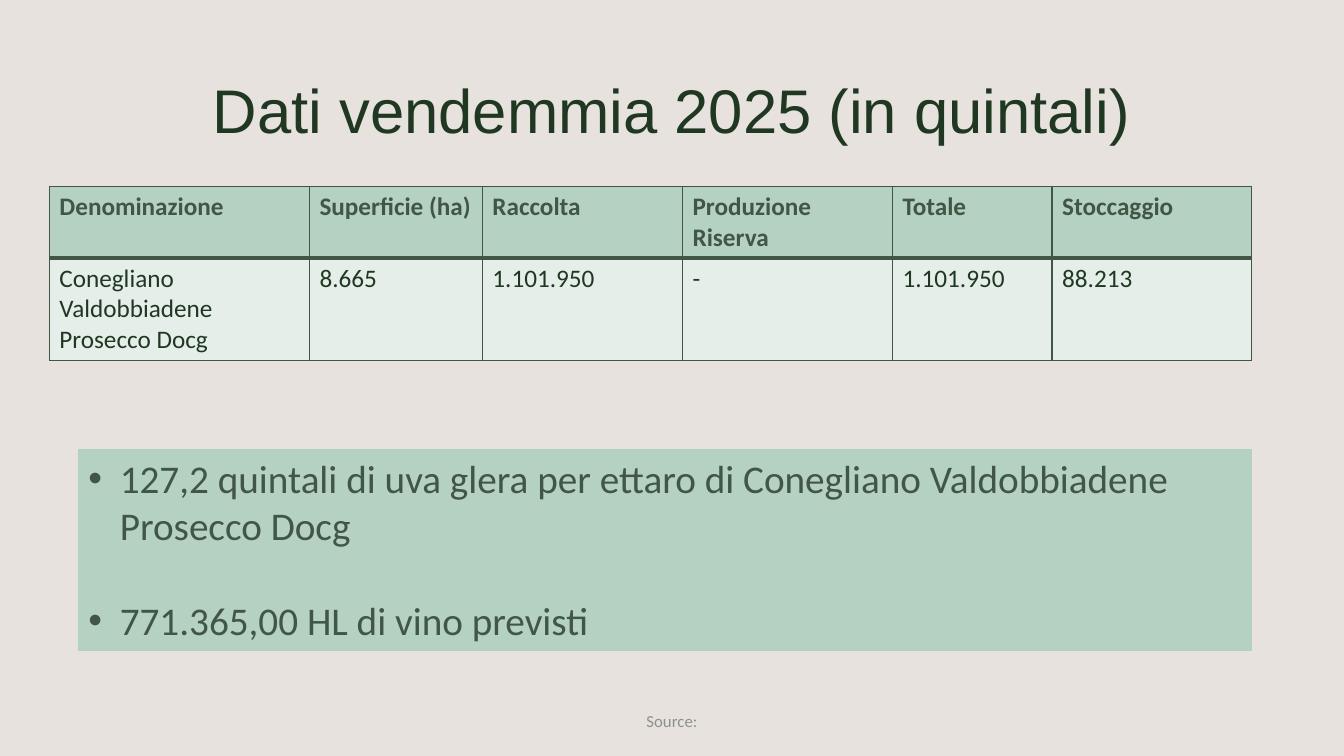
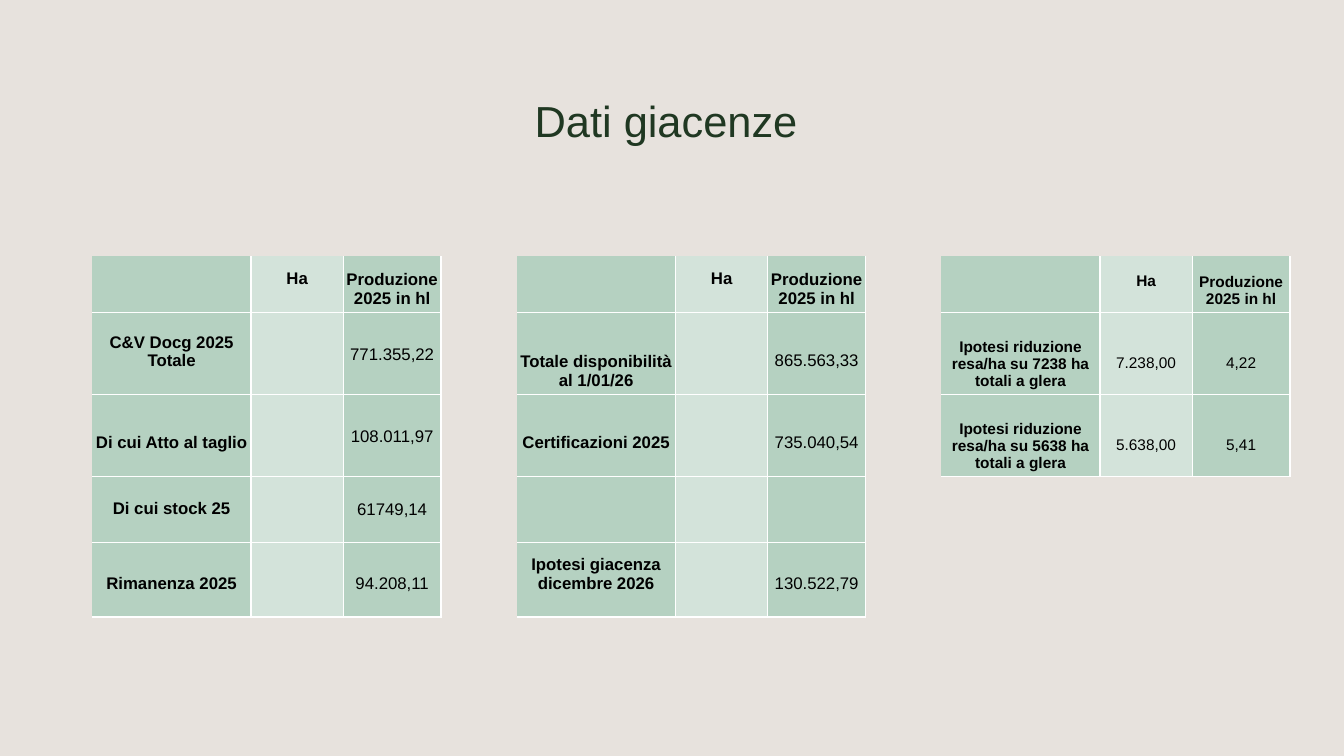
import pptx
import pptx.util
import pptx.dml.color
import pptx.enum.shapes
import pptx.enum.text
from lxml import etree

Pt = pptx.util.Pt
ALIGN = pptx.enum.text.PP_ALIGN
ANCHOR = pptx.enum.text.MSO_ANCHOR
DRAWING_NS = "http://schemas.openxmlformats.org/drawingml/2006/main"

# Shared look
BACKGROUND, INK, MOSS = "E7E2DD", "203822", "415644"
SAGE, MIST, PALE, WHITE, BLACK = "B5D1C1", "D3E3DA", "E5EEE9", "FFFFFF", "000000"
HEADING_FONT, BODY_FONT = "Arial", "Calibri"

# Content: harvest
HARVEST_TITLE = "Dati vendemmia 2025 (in quintali)"
HARVEST_ROWS = [
    ["Denominazione", "Superficie (ha)", "Raccolta", "Produzione Riserva",
     "Totale", "Stoccaggio"],
    ["Conegliano Valdobbiadene Prosecco Docg", "8.665", "1.101.950", "-",
     "1.101.950", "88.213"],
]
HARVEST_COLUMNS = [185.8, 123.5, 143, 150, 114, 142.4]
HARVEST_HEIGHTS = [51, 73]
HARVEST_NOTES = [
    "127,2 quintali di uva glera per ettaro di Conegliano Valdobbiadene Prosecco Docg",
    "771.365,00 HL di vino previsti",
]
SOURCE_LABEL = "Source:"

# Content: stocks. Each cell is its text and where the text sits:
# on the bottom edge, one line above it, or in the middle.
LOW, RAISED, MIDDLE = "low", "raised", "middle"
EMPTY = ("", LOW)
STOCK_TITLE = "Dati giacenze "
STOCK_HEADER = [EMPTY, ("Ha", RAISED), ("Produzione 2025 in hl", LOW)]
STOCK_TABLES = [
    (12, [
        [("C&V Docg 2025 Totale", RAISED), EMPTY, ("771.355,22", MIDDLE)],
        [("Di cui Atto al taglio", RAISED), EMPTY, ("108.011,97", MIDDLE)],
        [("Di cui stock 25", RAISED), EMPTY, ("61749,14", MIDDLE)],
        [("Rimanenza 2025", RAISED), EMPTY, ("94.208,11", RAISED)],
    ]),
    (12, [
        [("Totale disponibilità al 1/01/26", LOW), EMPTY, ("865.563,33", RAISED)],
        [("Certificazioni 2025", RAISED), EMPTY, ("735.040,54", RAISED)],
        [EMPTY, EMPTY, EMPTY],
        [("Ipotesi giacenza dicembre 2026", RAISED), EMPTY, ("130.522,79", RAISED)],
    ]),
    (11, [
        [("Ipotesi riduzione resa/ha su 7238 ha totali a glera", LOW),
         ("7.238,00", RAISED), ("4,22", RAISED)],
        [("Ipotesi riduzione resa/ha su 5638 ha totali a glera", LOW),
         ("5.638,00", RAISED), ("5,41", RAISED)],
    ]),
]
STOCK_COLUMNS = [113.3, 66, 69.8]
STOCK_HEIGHTS = [40.4, 58.6, 58.6, 46.8, 53.4]
STOCK_LEFT, STOCK_TOP, STOCK_PITCH = 66, 183, 303.2


def color(value):
    return pptx.dml.color.RGBColor.from_string(value)


def box(left, top, width, height):
    return Pt(left), Pt(top), Pt(width), Pt(height)


def add_text(paragraph, text, size, font, ink, bold=False, align=ALIGN.LEFT):
    paragraph.alignment = align
    run = paragraph.add_run()
    run.text = text
    run.font.size, run.font.name, run.font.bold = Pt(size), font, bold
    run.font.color.rgb = color(ink)


def add_titled_slide(deck, title, top, height, size):
    slide = deck.slides.add_slide(deck.slide_layouts[5])
    heading = slide.shapes.title
    heading.left, heading.top, heading.width, heading.height = box(66, top, 828, height)
    frame = heading.text_frame
    frame.word_wrap = True
    frame.vertical_anchor = ANCHOR.MIDDLE
    frame.paragraphs[0].line_spacing = 0.9
    add_text(frame.paragraphs[0], title, size, HEADING_FONT, INK, align=ALIGN.CENTER)
    return slide


def add_bullet(paragraph, indent):
    properties = paragraph._p.get_or_add_pPr()
    properties.set("marL", str(Pt(indent)))
    properties.set("indent", str(-Pt(indent)))
    etree.SubElement(properties, f"{{{DRAWING_NS}}}buFont", typeface="Arial")
    etree.SubElement(properties, f"{{{DRAWING_NS}}}buChar", char="•")


def set_borders(cell, ink, **widths):
    """Draw the edges L, R, T and B; width 0 leaves an edge open."""
    properties = cell._tc.get_or_add_tcPr()
    for place, edge in enumerate("LRTB"):
        width = widths.get(edge, 1)
        line = etree.Element(f"{{{DRAWING_NS}}}ln{edge}", w=str(Pt(width)))
        fill = etree.SubElement(
            line, f"{{{DRAWING_NS}}}{'solidFill' if width else 'noFill'}")
        if width:
            etree.SubElement(fill, f"{{{DRAWING_NS}}}srgbClr", val=ink)
        properties.insert(place, line)


def add_grid(slide, left, top, columns, heights):
    grid = slide.shapes.add_table(
        len(heights), len(columns),
        *box(left, top, sum(columns), sum(heights))).table
    grid.first_row = grid.horz_banding = False
    for column, width in zip(grid.columns, columns):
        column.width = Pt(width)
    for row, height in zip(grid.rows, heights):
        row.height = Pt(height)
    return grid


def fill_cell(cell, fill):
    cell.fill.solid()
    cell.fill.fore_color.rgb = color(fill)


def build_harvest(deck):
    slide = add_titled_slide(deck, HARVEST_TITLE, 28.8, 104.4, 44)

    # Harvest table, with a heavy rule under the header
    grid = add_grid(slide, 35.3, 133.2, HARVEST_COLUMNS, HARVEST_HEIGHTS)
    for r, row in enumerate(HARVEST_ROWS):
        header = r == 0
        for c, text in enumerate(row):
            cell = grid.cell(r, c)
            fill_cell(cell, SAGE if header else PALE)
            set_borders(cell, MOSS, **{"B" if header else "T": 3})
            add_text(cell.text_frame.paragraphs[0], text, 18, BODY_FONT,
                     MOSS if header else INK, bold=header)

    # Notes panel
    panel = slide.shapes.add_shape(
        pptx.enum.shapes.MSO_SHAPE.RECTANGLE, *box(56, 321, 838, 143.5))
    panel.shadow.inherit = False
    panel.fill.solid()
    panel.fill.fore_color.rgb = color(SAGE)
    panel.line.color.rgb = color("AFD3C0")
    panel.line.width = Pt(0.75)
    frame = panel.text_frame
    frame.word_wrap = True
    frame.vertical_anchor = ANCHOR.TOP
    for i, note in enumerate(HARVEST_NOTES):
        paragraph = frame.add_paragraph() if i else frame.paragraphs[0]
        add_bullet(paragraph, 22.5)
        if i:
            paragraph.space_before = Pt(34)
        add_text(paragraph, note, 28, BODY_FONT, MOSS)

    # Source line
    source = slide.shapes.add_textbox(*box(318, 500.5, 324, 28.8)).text_frame
    source.word_wrap = True
    source.vertical_anchor = ANCHOR.MIDDLE
    add_text(source.paragraphs[0], SOURCE_LABEL, 12, BODY_FONT, "8D918D",
             align=ALIGN.CENTER)


def build_stocks(deck):
    slide = add_titled_slide(deck, STOCK_TITLE, 47.5, 81.4, 31)
    for t, (size, body) in enumerate(STOCK_TABLES):
        rows = [STOCK_HEADER] + body
        grid = add_grid(slide, STOCK_LEFT + t * STOCK_PITCH, STOCK_TOP,
                        STOCK_COLUMNS, STOCK_HEIGHTS[:len(rows)])
        bottom_margin = {LOW: 3.6, RAISED: 3.6 + 1.15 * size, MIDDLE: 0}
        for r, row in enumerate(rows):
            for c, (text, seat) in enumerate(row):
                cell = grid.cell(r, c)
                fill_cell(cell, MIST if c == 1 else SAGE)
                set_borders(cell, WHITE, L=min(c, 1), T=min(r, 1))
                if not text:
                    continue
                cell.margin_left = cell.margin_right = cell.margin_top = Pt(0.7)
                cell.margin_bottom = Pt(bottom_margin[seat])
                cell.vertical_anchor = (
                    ANCHOR.MIDDLE if seat == MIDDLE else ANCHOR.BOTTOM)
                add_text(cell.text_frame.paragraphs[0], text, size, HEADING_FONT,
                         BLACK, bold=r == 0 or c == 0, align=ALIGN.CENTER)


def main():
    deck = pptx.Presentation()
    deck.slide_width, deck.slide_height = Pt(960), Pt(540)
    backdrop = deck.slide_master.background.fill
    backdrop.solid()
    backdrop.fore_color.rgb = color(BACKGROUND)
    build_harvest(deck)
    build_stocks(deck)
    deck.save("out.pptx")


if __name__ == "__main__":
    main()
